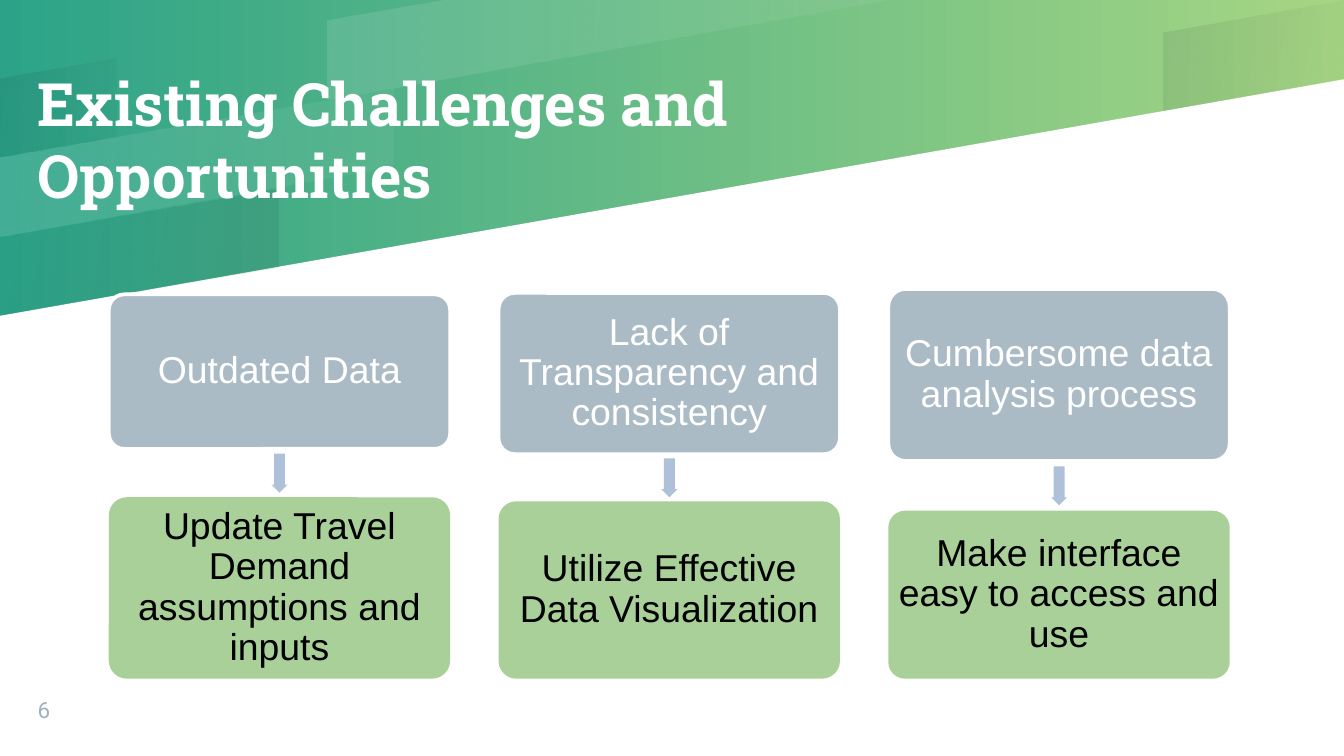
from dataclasses import dataclass

from lxml import etree
from pptx import Presentation, util as u
from pptx.dml.color import RGBColor
from pptx.enum import shapes, text
from pptx.oxml.ns import qn

PX = 9144  # 100 px to the inch


@dataclass(frozen=True)
class Theme:
    white: str = "FFFFFF"
    black: str = "000000"
    shade: str = "00001A"
    teal: str = "2CA388"
    lime: str = "A6D683"
    challenge: str = "A1B3C0"
    opportunity: str = "A0CB8D"
    arrow: str = "AFC1D9"
    number: str = "9EB3C2"
    title_font: str = "Roboto Slab"
    body_font: str = "Arial"
    number_font: str = "Roboto"
    title_size: int = 32
    body_size: int = 20
    number_size: int = 12


T = Theme()

# colour, opacity at each end, outline
BANDS = [
    (T.white, (12, 5), [(332, 0), (244, 15), (244, 74), (665, 0)]),
    (T.shade, (8, 2), [(0, 58), (0, 117), (87, 102), (87, 43)]),
    (T.shade, (2, 8), [(0, 176), (0, 235), (207, 199), (207, 140)]),
    (T.shade, (8, 2), [(1000, 0), (866, 24), (866, 82), (1000, 59)]),
    (T.white, (12, 5), [(0, 117), (0, 176), (293, 124), (293, 66)]),
]
PAGE = [(0, 563), (1000, 563), (1000, 59), (0, 235)]

# challenge, its top and bottom, opportunity, its top
COLUMNS = [
    ("Outdated Data", 219, 334, "Update Travel Demand assumptions and inputs", 370),
    ("Lack of Transparency and consistency", 218, 338, "Utilize Effective Data Visualization", 373),
    ("Cumbersome data analysis process", 215, 343, "Make interface easy to access and use", 380),
]


def px(*values):
    return [u.Emu(round(v * PX)) for v in values]


def rgb(value):
    return RGBColor.from_string(value)


def set_opacity(sp, *percents):
    """Give each colour of the fill its opacity, in order."""
    for clr, percent in zip(sp._element.spPr.iter(qn("a:srgbClr")), percents):
        etree.SubElement(clr, qn("a:alpha"), val=str(percent * 1000))


def fill_solid(sp, color):
    sp.shadow.inherit = False
    sp.fill.solid()
    sp.fill.fore_color.rgb = rgb(color)
    sp.line.fill.background()


def fill_gradient(fill, start, end, angle):
    fill.gradient()
    fill.gradient_angle = angle
    for stop, color in zip(fill.gradient_stops, (start, end)):
        stop.color.rgb = rgb(color)


def write(tf, content, font, size, color, anchor, align=text.PP_ALIGN.LEFT, inset=0):
    tf.word_wrap = True
    tf.auto_size = text.MSO_AUTO_SIZE.NONE
    tf.vertical_anchor = anchor
    tf.margin_left, tf.margin_top, tf.margin_right, tf.margin_bottom = px(*[inset] * 4)
    tf.text = content
    p = tf.paragraphs[0]
    p.alignment = align
    r = p.runs[0]
    r.font.size = u.Pt(size)
    r.font.color.rgb = rgb(color)
    r.font.name = font
    return p


def add_outline(s, points):
    fb = s.shapes.build_freeform(*points[0], scale=PX)
    fb.add_line_segments(points[1:], close=True)
    return fb.convert_to_shape()


def add_backdrop(s):
    fill_gradient(s.background.fill, T.teal, T.lime, 0)
    fill_solid(add_outline(s, PAGE), T.white)
    for color, opacity, points in BANDS:
        sp = add_outline(s, points)
        fill_solid(sp, color)
        fill_gradient(sp.fill, color, color, 350)
        set_opacity(sp, *opacity)


def add_title(s, x, y, w, h):
    sp = s.shapes.title
    sp.left, sp.top, sp.width, sp.height = px(x, y, w, h)
    p = write(sp.text_frame, "Existing Challenges and Opportunities", T.title_font,
              T.title_size, T.white, text.MSO_ANCHOR.MIDDLE)
    r = p.runs[0]
    r.font.bold = True
    effects = etree.Element(qn("a:effectLst"))
    shadow = etree.SubElement(effects, qn("a:outerShdw"), blurRad="38100", dist="25400", dir="2700000")
    clr = etree.SubElement(shadow, qn("a:srgbClr"), val=T.black)
    etree.SubElement(clr, qn("a:alpha"), val="40000")
    r._r.rPr.find(qn("a:solidFill")).addnext(effects)


def add_card(s, x, y, w, h, content, fill, opacity, color):
    sp = s.shapes.add_shape(shapes.MSO_SHAPE.ROUNDED_RECTANGLE, *px(x, y, w, h))
    sp.adjustments[0] = 0.1
    fill_solid(sp, fill)
    set_opacity(sp, opacity)
    p = write(sp.text_frame, content, T.body_font, T.body_size, color,
              text.MSO_ANCHOR.MIDDLE, text.PP_ALIGN.CENTER, inset=3)
    p.line_spacing = 0.9
    return sp


def add_down_arrow(s, cx, cy, length=29, thickness=12):
    sp = s.shapes.add_shape(shapes.MSO_SHAPE.RIGHT_ARROW,
                            *px(cx - length / 2, cy - thickness / 2, length, thickness))
    sp.rotation = 90
    sp.adjustments[0], sp.adjustments[1] = 0.67, 0.5
    fill_solid(sp, T.arrow)


def add_column(s, x, w, bottom, column):
    challenge, top, split, opportunity, resume = column
    sp = add_card(s, x, top, w, split - top, challenge, T.challenge, 89, T.white)
    sp.line.color.rgb = rgb(T.white)
    sp.line.width = u.Pt(2)
    add_down_arrow(s, x + w / 2, (split + resume) / 2)
    add_card(s, x, resume, w, bottom - resume, opportunity, T.opportunity, 90, T.black)


def add_columns(s, x, w, bottom, gap):
    for i, column in enumerate(COLUMNS):
        add_column(s, x + i * (w + gap), w, bottom, column)


def add_slide_number(s, x, y, w, h):
    sp = s.shapes.add_textbox(*px(x, y, w, h))
    write(sp.text_frame, "6", T.number_font, T.number_size, T.number, text.MSO_ANCHOR.BOTTOM)


def main():
    prs = Presentation()
    prs.slide_width, prs.slide_height = u.Inches(10), u.Pt(405)
    s = prs.slides.add_slide(prs.slide_layouts[5])
    add_backdrop(s)
    # the title placeholder comes first, so lift it above the backdrop
    s.shapes._spTree.append(s.shapes.title._element)
    add_title(s, 28, 4, 637, 198)
    add_columns(s, x=81, w=254, bottom=505, gap=36)
    add_slide_number(s, 28, 511, 53, 27)
    prs.save("out.pptx")


if __name__ == "__main__":
    main()
